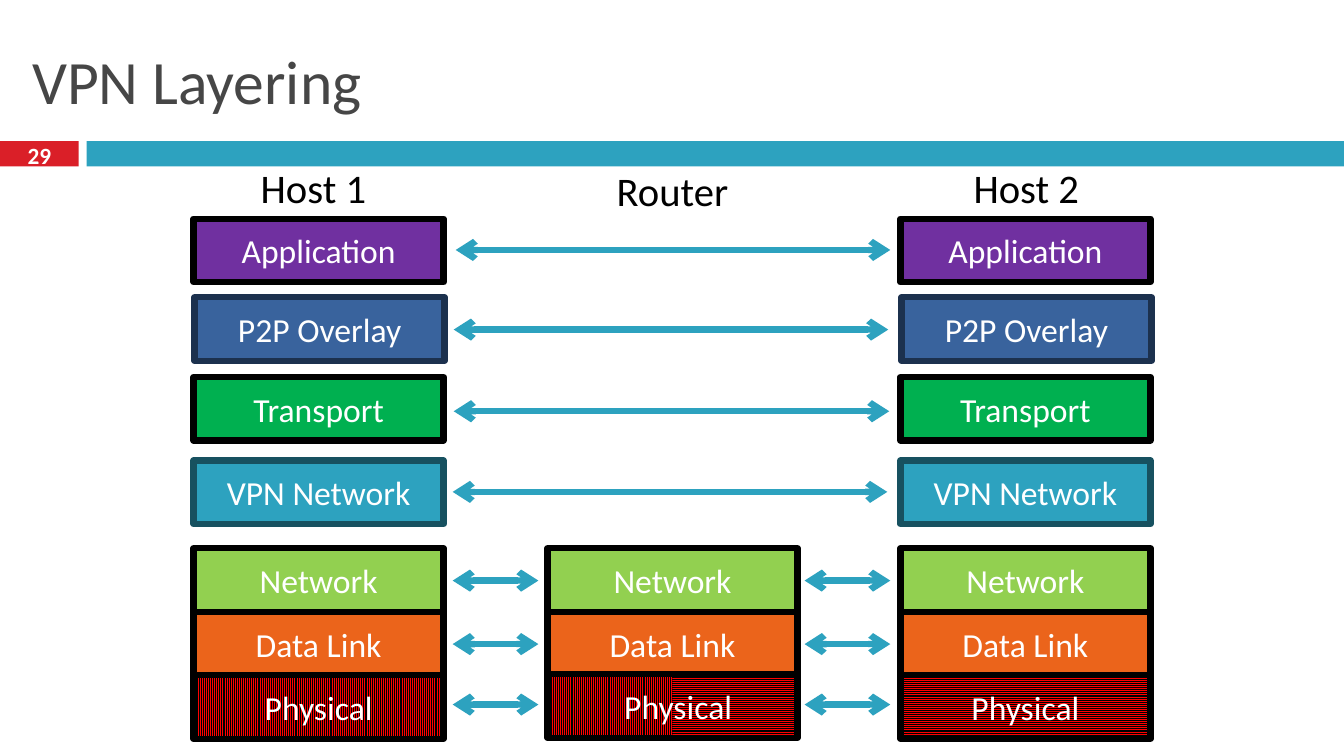
from pptx import Presentation, util as u
from pptx.dml.color import RGBColor
from pptx.enum import dml, shapes, text
from pptx.oxml.ns import qn
from lxml import etree

THEME = dict(
    font="Calibri", title=44, host=29, layer=24, number=16.6, stroke=4.5,
    ink="000000", white="FFFFFF", grey="464646", red="DA1F28", teal="2DA2BF",
    wire="FF0000",
)
W, H = 13.33, 7.5
BOX_W, BOX_H = 2.48, 0.63
COLS = [1.92, 5.43, 8.93]
STACK_TOP = 5.44
PHYSICAL_TOP = STACK_TOP + 2 * BOX_H
VERT = dml.MSO_PATTERN.LIGHT_VERTICAL
HORZ = dml.MSO_PATTERN.LIGHT_HORIZONTAL

prs = Presentation()
prs.slide_width, prs.slide_height = u.Inches(W), u.Inches(H)
s = prs.slides.add_slide(prs.slide_layouts[6])


def write(txt, at=None, sp=None, size=THEME["layer"], color=THEME["white"], bold=False,
          align=text.PP_ALIGN.CENTER, anchor=text.MSO_ANCHOR.MIDDLE, before=0, left=0.1):
    sp = sp or s.shapes.add_textbox(*map(u.Inches, at))
    tf = sp.text_frame
    tf.word_wrap = True
    tf.vertical_anchor = anchor
    tf.margin_left = u.Inches(left)
    p = tf.paragraphs[0]
    p.alignment = align
    p.space_before = u.Pt(before)
    r = p.add_run()
    r.text = txt
    r.font.name, r.font.size, r.font.bold = THEME["font"], u.Pt(size), bold
    r.font.color.rgb = RGBColor.from_string(color)


def box(at, fill=None, line=None, pattern=None):
    sp = s.shapes.add_shape(shapes.MSO_SHAPE.RECTANGLE, *map(u.Inches, at))
    sp.shadow.inherit = False
    if pattern:
        sp.fill.patterned()
        sp.fill.pattern = pattern
        sp.fill.fore_color.rgb = RGBColor.from_string(THEME["ink"])
        sp.fill.back_color.rgb = RGBColor.from_string(THEME["wire"])
    elif fill:
        sp.fill.solid()
        sp.fill.fore_color.rgb = RGBColor.from_string(fill)
    else:
        sp.fill.background()
    if line:
        sp.line.color.rgb = RGBColor.from_string(line)
        sp.line.width = u.Pt(THEME["stroke"])
    else:
        sp.line.fill.background()
    return sp


box((0, 1.4, 0.78, 0.25), THEME["red"])
box((0.86, 1.4, W - 0.86, 0.25), THEME["teal"])
write("VPN Layering", (0.22, 0.25, 12.89, 1.08), size=THEME["title"],
      color=THEME["grey"], align=text.PP_ALIGN.LEFT)
write("29", (0, 1.37, 0.78, 0.33), size=THEME["number"], bold=True)

for name, x, y in [("Host 1", 2.33, 1.57), ("Router", 5.89, 1.6), ("Host 2", 9.4, 1.57)]:
    write(name, (x, y, 1.56, 0.59), size=THEME["host"], color=THEME["ink"],
          anchor=text.MSO_ANCHOR.TOP, before=7)

ends, everywhere = [COLS[0], COLS[2]], COLS
layers = [
    ("Application", 2.17, "7030A0", THEME["ink"], ends),
    ("P2P Overlay", 2.95, "39639D", "1C314E", [x + 0.01 for x in ends]),
    ("Transport", 3.74, "00B050", THEME["ink"], ends),
    ("VPN Network", 4.57, THEME["teal"], "175160", ends),
    ("Network", STACK_TOP, "92D050", THEME["ink"], everywhere),
    ("Data Link", STACK_TOP + BOX_H, "EB641B", THEME["ink"], everywhere),
]
for name, y, fill, line, xs in layers:
    for x in xs:
        write(name, sp=box((x, y, BOX_W, BOX_H), fill, line))

for x, pattern in zip(ends, [VERT, HORZ]):
    write("Physical", sp=box((x, PHYSICAL_TOP, BOX_W, BOX_H), line=THEME["ink"], pattern=pattern))
for i, pattern in enumerate([VERT, HORZ]):
    box((COLS[1] + i * BOX_W / 2, PHYSICAL_TOP, BOX_W / 2, BOX_H), pattern=pattern)
box((COLS[1], PHYSICAL_TOP - 0.01, BOX_W, BOX_H), line=THEME["ink"])
write("Physical", (5.44, 6.76, 2.45, 0.52), anchor=text.MSO_ANCHOR.TOP, before=4.8, left=0.22)

arrows = [(4.52, 8.83, 2.48), (4.5, 8.81, 3.27), (4.5, 8.82, 4.08), (4.49, 8.8, 4.88)]
arrows += [(x, x + 0.85, y) for y in (5.76, 6.39, 6.99) for x in (4.49, 7.98)]
for x1, x2, y in arrows:
    c = s.shapes.add_connector(shapes.MSO_CONNECTOR.STRAIGHT, *map(u.Inches, (x1, y, x2, y)))
    c.line.color.rgb = RGBColor.from_string(THEME["teal"])
    c.line.width = u.Pt(THEME["stroke"])
    ln = c.line._get_or_add_ln()
    for end in ("a:headEnd", "a:tailEnd"):
        etree.SubElement(ln, qn(end), type="arrow")
    etree.SubElement(c._element.spPr, qn("a:effectLst"))

prs.save("out.pptx")
